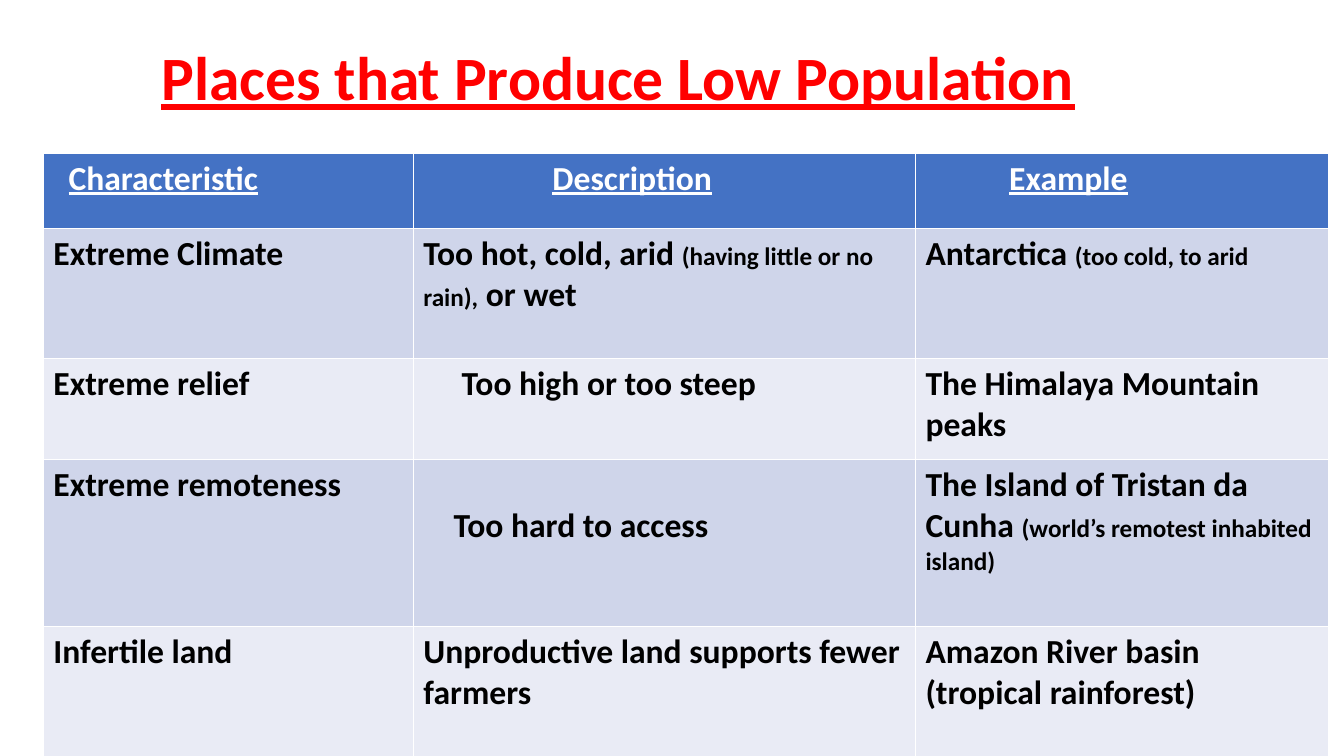
from pptx import Presentation
from pptx.dml.color import RGBColor
from pptx.enum.text import MSO_ANCHOR, PP_ALIGN
from pptx.util import Inches, Pt

MIDDLE = MSO_ANCHOR.MIDDLE
LEFT = PP_ALIGN.LEFT
FONT = "Calibri"
LARGE, SMALL = 24, 18
COLORS = {
    "title": "FF0000",
    "header": "4472C4",
    "header_text": "FFFFFF",
    "odd_row": "CFD5EA",
    "even_row": "E9EBF5",
    "body_text": "000000",
}
COLUMN_WIDTHS = [3.67, 4.98, 4.1]
ROW_HEIGHTS = [0.75, 1.29, 1, 1.66, 1.29]
CELL_MARGIN = 0.1
INDENTS = {(0, 0): 0.15, (0, 1): 1.28, (0, 2): 0.83, (2, 1): 0.38, (3, 1): 0.3}
TOP_MARGINS = {(3, 1): 0.46}
PLACES = [
    [["Characteristic"], ["Description"], ["Example"]],
    [["Extreme Climate"],
     ["Too hot, cold, arid ", "(having little or no rain),", " or wet"],
     ["Antarctica ", "(too cold, to arid"]],
    [["Extreme relief"], ["Too high or too steep"], ["The Himalaya Mountain peaks"]],
    [["Extreme remoteness"], ["Too hard to access"],
     ["The Island of Tristan da Cunha ", "(world’s remotest inhabited island)"]],
    [["Infertile land"], ["Unproductive land supports fewer farmers"],
     ["Amazon River basin (tropical rainforest)"]],
]


def style_font(font, color, size=None, underline=None):
    font.name = FONT
    font.bold = True
    font.underline = underline
    font.color.rgb = RGBColor.from_string(COLORS[color])
    if size:
        font.size = Pt(size)


def place_title(slide, left, top, width, height):
    title = slide.shapes.title
    title.left, title.top = Inches(left), Inches(top)
    title.width, title.height = Inches(width), Inches(height)
    title.text_frame.text = "Places that Produce Low Population"
    title.text_frame.vertical_anchor = MIDDLE
    heading = title.text_frame.paragraphs[0]
    heading.alignment = LEFT
    heading.line_spacing = 0.9
    style_font(heading.font, "title", 44, True)


def fill_cell(cell, phrases, row, column):
    is_header = row == 0
    band = "header" if is_header else "odd_row" if row % 2 else "even_row"
    cell.fill.solid()
    cell.fill.fore_color.rgb = RGBColor.from_string(COLORS[band])
    cell.margin_left = Inches(CELL_MARGIN + INDENTS.get((row, column), 0))
    cell.margin_top = Inches(TOP_MARGINS.get((row, column), 0.05))
    statement = cell.text_frame.paragraphs[0]
    text_color = "header_text" if is_header else "body_text"
    uniform_size = LARGE if len(phrases) == 1 else None
    style_font(statement.font, text_color, uniform_size, is_header)
    for index, phrase in enumerate(phrases):
        run = statement.add_run()
        run.text = phrase
        if not uniform_size:
            run.font.size = Pt(SMALL if index % 2 else LARGE)


def place_table(slide, left, top, width, height):
    places = slide.shapes.add_table(
        len(PLACES), len(COLUMN_WIDTHS),
        Inches(left), Inches(top), Inches(width), Inches(height)).table
    for column, share in zip(places.columns, COLUMN_WIDTHS):
        column.width = Inches(width * share / sum(COLUMN_WIDTHS))
    for row, share in zip(places.rows, ROW_HEIGHTS):
        row.height = Inches(height * share / sum(ROW_HEIGHTS))
    for row, entries in enumerate(PLACES):
        for column, phrases in enumerate(entries):
            fill_cell(places.cell(row, column), phrases, row, column)


def main():
    deck = Presentation()
    deck.slide_width, deck.slide_height = Inches(13.33), Inches(7.5)
    slide = deck.slides.add_slide(deck.slide_layouts[5])
    place_title(slide, 1.5, 0.28, 10.5, 1.04)
    place_table(slide, 0.43, 1.52, sum(COLUMN_WIDTHS), sum(ROW_HEIGHTS))
    deck.save("out.pptx")


if __name__ == "__main__":
    main()
